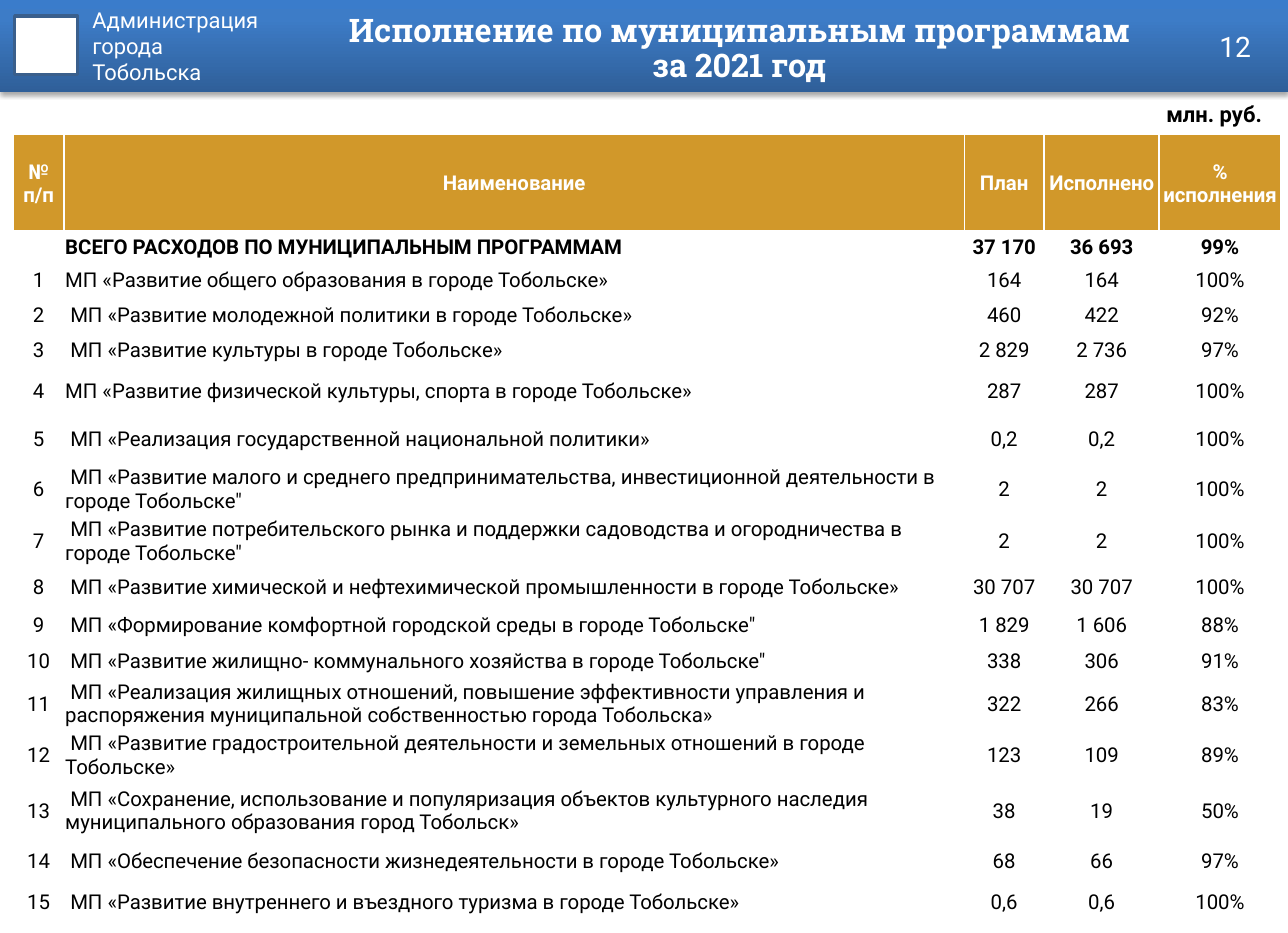
from lxml.etree import SubElement
from pptx import Presentation
from pptx.dml.color import RGBColor
from pptx.enum.shapes import MSO_SHAPE as Shape
from pptx.enum.text import MSO_ANCHOR as Anchor, MSO_AUTO_SIZE as AutoSize, PP_ALIGN as Align
from pptx.oxml import parse_xml
from pptx.oxml.ns import nsdecls, qn
from pptx.util import Cm, Pt

WHITE, BLACK, GOLD, NAVY = "FFFFFF", "000000", "D1982A", "3A5F8C"
BAND_STOPS = [(0, "2F5F99"), (80, "3D7CC7"), (100, "3A7CCB")]

HEADINGS = ["№ п/п", "Наименование", "План", "Исполнено", "% исполнения"]
TOTAL = ["", "ВСЕГО РАСХОДОВ ПО МУНИЦИПАЛЬНЫМ ПРОГРАММАМ", "37 170", "36 693", "99%"]
PROGRAMMES = [
    ("МП «Развитие общего образования в городе Тобольске»", "164", "164", "100%"),
    (" МП «Развитие молодежной политики в городе Тобольске»", "460", "422", "92%"),
    (" МП «Развитие культуры в городе Тобольске»", "2 829", "2 736", "97%"),
    ("МП «Развитие физической культуры, спорта в городе Тобольске»", "287", "287", "100%"),
    (" МП «Реализация государственной национальной политики»", "0,2", "0,2", "100%"),
    (" МП «Развитие малого и среднего предпринимательства, инвестиционной "
     "деятельности в городе Тобольске\"", "2", "2", "100%"),
    (" МП «Развитие потребительского рынка и поддержки садоводства и "
     "огородничества в городе Тобольске\"", "2", "2", "100%"),
    (" МП «Развитие химической и нефтехимической промышленности в городе Тобольске»",
     "30 707", "30 707", "100%"),
    (" МП «Формирование комфортной городской среды в городе Тобольске\"",
     "1 829", "1 606", "88%"),
    (" МП «Развитие жилищно- коммунального хозяйства в городе Тобольске\"",
     "338", "306", "91%"),
    (" МП «Реализация жилищных отношений, повышение эффективности управления и "
     "распоряжения муниципальной собственностью города Тобольска»", "322", "266", "83%"),
    (" МП «Развитие градостроительной деятельности и земельных отношений в "
     "городе Тобольске»", "123", "109", "89%"),
    (" МП «Сохранение, использование и популяризация объектов культурного наследия "
     "муниципального образования город Тобольск»", "38", "19", "50%"),
    (" МП «Обеспечение безопасности жизнедеятельности в городе Тобольске»",
     "68", "66", "97%"),
    (" МП «Развитие внутреннего и въездного туризма в городе Тобольске»",
     "0,6", "0,6", "100%"),
]
COLUMN_WIDTHS = [1.14, 20.27, 1.8, 2.59, 2.74]
ROW_HEIGHTS = [2.21, 0.66, 0.81, 0.79, 0.79, 1.02, 1.14, 1.14, 1.19,
               0.86, 0.86, 0.76, 1.17, 1.14, 1.37, 0.89, 0.97]


def rgb(value):
    return RGBColor.from_string(value)


class ReportSlide:
    font, title_font, table_size = "Roboto", "Roboto Slab", 13

    def __init__(self, deck):
        self.slide = deck.slides.add_slide(deck.slide_layouts[5])
        self.shapes = self.slide.shapes

    def run(self, paragraph, text, size, color, bold=False, font=None):
        run = paragraph.add_run()
        run.text = text
        run.font.name, run.font.size, run.font.bold = font or self.font, Pt(size), bold
        run.font.color.rgb = rgb(color)

    def frame(self, shape, anchor, wrap=True):
        frame = shape.text_frame
        frame.word_wrap, frame.auto_size, frame.vertical_anchor = wrap, AutoSize.NONE, anchor
        frame.margin_left = frame.margin_right = Cm(0.28)
        frame.margin_top = frame.margin_bottom = Cm(0.14)
        return frame

    def rectangle(self, x, y, width, height):
        return self.shapes.add_shape(Shape.RECTANGLE, Cm(x), Cm(y), Cm(width), Cm(height))

    def band(self, width, height):
        band = self.rectangle(0, 0, width, height)
        band.line.fill.background()
        stops = "".join(f'<a:gs pos="{pos * 1000}"><a:srgbClr val="{color}"/></a:gs>'
                        for pos, color in BAND_STOPS)
        properties = band.element.spPr
        properties.insert(2, parse_xml(
            f'<a:gradFill {nsdecls("a")} rotWithShape="1"><a:gsLst>{stops}</a:gsLst>'
            '<a:lin ang="16200000" scaled="0"/></a:gradFill>'))
        properties.append(parse_xml(
            f'<a:effectLst {nsdecls("a")}><a:outerShdw blurRad="{Pt(3.1)}" dist="{Pt(1.8)}" '
            f'dir="5400000" rotWithShape="0"><a:srgbClr val="{BLACK}">'
            '<a:alpha val="35000"/></a:srgbClr></a:outerShdw></a:effectLst>'))

    def emblem(self, x, y, width, height):
        emblem = self.rectangle(x, y, width, height)
        emblem.shadow.inherit = False
        emblem.fill.solid()
        emblem.fill.fore_color.rgb = rgb(WHITE)
        emblem.line.color.rgb = rgb(NAVY)
        emblem.line.width = Pt(2)

    def title(self, lines, x, y, width, height, size):
        title = self.shapes.title
        title.left, title.top, title.width, title.height = Cm(x), Cm(y), Cm(width), Cm(height)
        title.element.getparent().append(title.element)  # in front of the band
        paragraph = self.frame(title, Anchor.MIDDLE).paragraphs[0]
        paragraph.alignment, paragraph.line_spacing = Align.CENTER, 0.9
        for number, line in enumerate(lines):
            if number:
                paragraph.add_line_break()
            self.run(paragraph, line, size, WHITE, True, self.title_font)

    def text(self, lines, x, y, width, height, size, color, bold=False,
             align=Align.LEFT, anchor=Anchor.TOP, wrap=True):
        box = self.shapes.add_textbox(Cm(x), Cm(y), Cm(width), Cm(height))
        frame = self.frame(box, anchor, wrap)
        for number, line in enumerate(lines):
            paragraph = frame.add_paragraph() if number else frame.paragraphs[0]
            paragraph.alignment = align
            self.run(paragraph, line, size, color, bold)

    def borders(self, cell, top, bottom):
        properties = cell._tc.get_or_add_tcPr()
        for side, width in (("L", 1), ("R", 1), ("T", top), ("B", bottom)):
            properties.append(parse_xml(
                f'<a:ln{side} {nsdecls("a")} w="{Pt(width)}"><a:solidFill>'
                f'<a:srgbClr val="{WHITE}"/></a:solidFill></a:ln{side}>'))

    def cell(self, cell, text, row, column):
        heading = row == 0
        cell.margin_left = cell.margin_right = cell.margin_top = Cm(0.03)
        cell.margin_bottom = 0
        cell.vertical_anchor = Anchor.MIDDLE
        self.borders(cell, 3 if row in (1, 2) else 1, 3 if row < 2 else 1)
        if heading:
            cell.fill.solid()
            cell.fill.fore_color.rgb = rgb(GOLD)
        else:
            cell.fill.background()
        paragraph = cell.text_frame.paragraphs[0]
        paragraph.alignment = Align.LEFT if column == 1 and not heading else Align.CENTER
        if text:
            self.run(paragraph, text, self.table_size, WHITE if heading else BLACK, row < 2)
        else:
            SubElement(paragraph._p, qn("a:endParaRPr"), sz=str(self.table_size * 100))

    def table(self, rows, x, y, widths, heights):
        table = self.shapes.add_table(len(rows), len(widths), Cm(x), Cm(y),
                                      Cm(sum(widths)), Cm(sum(heights))).table
        table.horz_banding = False
        for column, width in zip(table.columns, widths):
            column.width = Cm(width)
        for row, (values, height) in enumerate(zip(rows, heights)):
            table.rows[row].height = Cm(height)
            for column, value in enumerate(values):
                self.cell(table.cell(row, column), value, row, column)


def main():
    deck = Presentation()
    deck.slide_width, deck.slide_height = Cm(29.0), Cm(21.0)
    report = ReportSlide(deck)

    # Header band
    report.band(29.0, 2.08)
    report.emblem(0.33, 0.36, 1.42, 1.32)
    report.text(["Администрация", "города", "Тобольска"], 1.8, 0, 6.81, 2.69, 14, WHITE)
    report.title(["Исполнение по муниципальным программам", "за 2021 год"],
                 5.92, 0.13, 21.46, 1.98, 20.7)

    # Programme table
    numbered = [[str(number), *values] for number, values in enumerate(PROGRAMMES, 1)]
    report.table([HEADINGS, TOTAL, *numbered], 0.3, 3.02, COLUMN_WIDTHS, ROW_HEIGHTS)

    # Unit and page number
    report.text(["млн. руб."], 25.98, 2.13, 2.84, 0.89, 14, BLACK, bold=True, wrap=False)
    report.text(["12"], 21.69, 0.48, 6.76, 1.12, 18, WHITE,
                align=Align.RIGHT, anchor=Anchor.MIDDLE)

    deck.save("out.pptx")


if __name__ == "__main__":
    main()
